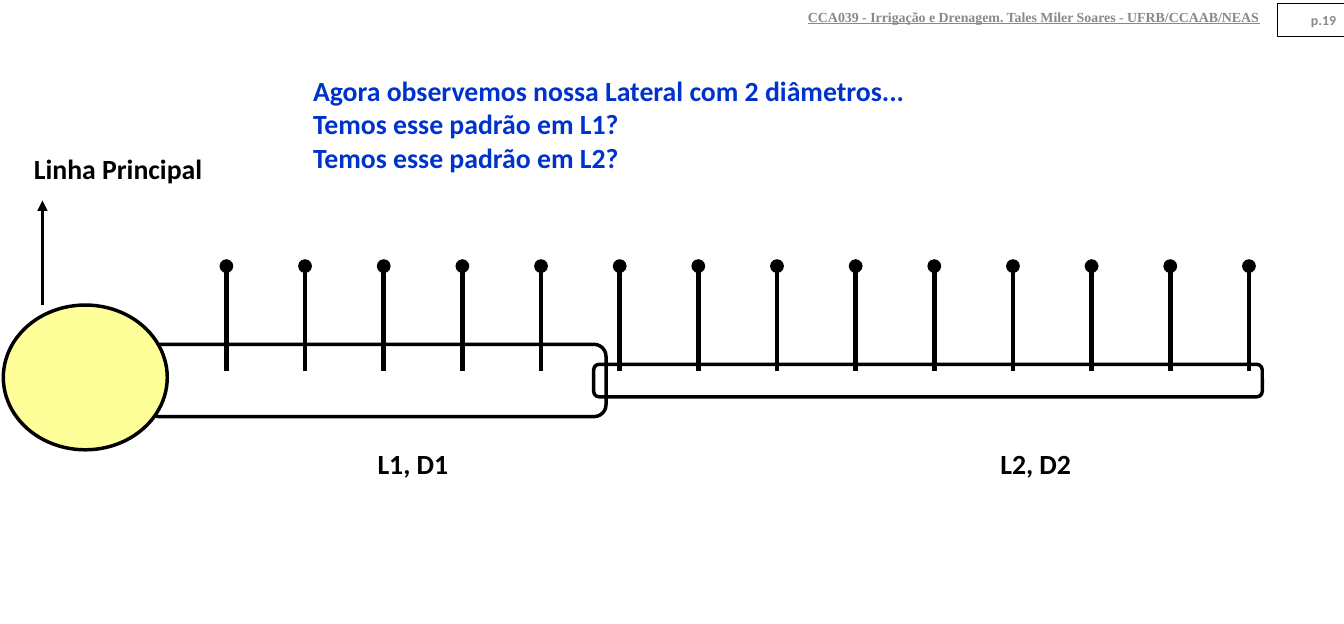
"""Build the slide about a two-diameter irrigation lateral with its emitters."""
import dataclasses

import pptx
import pptx.dml.color
import pptx.enum.shapes
import pptx.enum.text
import pptx.oxml
import pptx.oxml.ns
import pptx.slide
import pptx.text.text
import pptx.util

Pt = pptx.util.Pt
Align = pptx.enum.text.PP_ALIGN
Anchor = pptx.enum.text.MSO_ANCHOR
Preset = pptx.enum.shapes.MSO_SHAPE


@dataclasses.dataclass(frozen=True)
class Theme:
    ink: str = "000000"
    blue: str = "0033CC"
    grey: str = "898989"
    yellow: str = "FFFF99"
    body_font: str = "Calibri"
    header_font: str = "Times New Roman"
    body_size: float = 24
    header_size: float = 12
    thin: float = 0.75
    outline: float = 3
    emitter: float = 4


THEME = Theme()


@dataclasses.dataclass(frozen=True)
class Frame:
    left: float
    top: float
    width: float
    height: float


@dataclasses.dataclass(frozen=True)
class TextStyle:
    align: Align
    size: float = THEME.body_size
    color: str = THEME.ink
    font: str = THEME.body_font
    underline: bool = False
    anchor: Anchor = Anchor.TOP


@dataclasses.dataclass(frozen=True)
class Label:
    frame: Frame
    text: str
    style: TextStyle


@dataclasses.dataclass(frozen=True)
class Outline:
    preset: Preset
    frame: Frame
    width: float = THEME.outline
    fill: str | None = None
    text: str = ""


@dataclasses.dataclass(frozen=True)
class Riser:
    x: float
    bottom: float
    top: float
    width: float
    end: str


LABEL = TextStyle(Align.CENTER)
HEADING = TextStyle(Align.JUSTIFY, color=THEME.blue)
HEADER = TextStyle(Align.RIGHT, THEME.header_size, THEME.grey, THEME.header_font, True, Anchor.MIDDLE)
PAGE_NUMBER = TextStyle(Align.RIGHT, THEME.header_size, THEME.grey, anchor=Anchor.MIDDLE)

HEADING_FRAME = Frame(263.5, 60.4, 862, 94.3)
HEADING_LINES = (
    "Agora observemos nossa Lateral com 2 diâmetros...",
    "Temos esse padrão em L1?",
    "Temos esse padrão em L2?",
)
LABELS = (
    Label(Frame(8.6, 128, 187.2, 36.7), "Linha Principal", LABEL),
    Label(Frame(184.3, 382.9, 345.6, 36.7), "L1, D1", LABEL),
    Label(Frame(722.9, 382.9, 345.6, 36.7), "L2, D2", LABEL),
    Label(Frame(508.3, 0, 588.2, 28.8),
          "CCA039 - Irrigação e Drenagem. Tales Miler Soares - UFRB/CCAAB/NEAS", HEADER),
)
PAGE_BOX = Outline(Preset.RECTANGLE, Frame(1104.3, 2.9, 58.3, 28.8), THEME.thin, text="p.19")
PIPES = (
    Outline(Preset.ROUNDED_RECTANGLE, Frame(127.4, 298, 396.7, 62.6)),
    Outline(Preset.ROUNDED_RECTANGLE, Frame(513.4, 315.3, 578.2, 28.1)),
)
MAIN_LINE = Outline(Preset.OVAL, Frame(2.9, 264, 141.8, 125.3), fill=THEME.yellow)
MAIN_ARROW = Riser(36.7, 264, 173.5, THEME.outline, "triangle")
EMITTER_COUNT = 14
EMITTER_START = 195.8
EMITTER_GAP = 68.02
EMITTERS = tuple(
    Riser(EMITTER_START + index * EMITTER_GAP, 321, 230.3, THEME.emitter, "oval")
    for index in range(EMITTER_COUNT)
)


def rgb(color: str) -> pptx.dml.color.RGBColor:
    return pptx.dml.color.RGBColor.from_string(color)


def lengths(frame: Frame) -> tuple[pptx.util.Length, ...]:
    return tuple(Pt(value) for value in dataclasses.astuple(frame))


def write(text_frame: pptx.text.text.TextFrame, lines: tuple[str, ...], style: TextStyle) -> None:
    text_frame.word_wrap = True
    text_frame.auto_size = pptx.enum.text.MSO_AUTO_SIZE.NONE
    text_frame.vertical_anchor = style.anchor
    for index, line in enumerate(lines):
        para = text_frame.add_paragraph() if index else text_frame.paragraphs[0]
        para.alignment = style.align
        span = para.add_run()
        span.text = line
        span.font.name = style.font
        span.font.size = Pt(style.size)
        span.font.bold = True
        span.font.underline = style.underline
        span.font.color.rgb = rgb(style.color)


def add_heading(page: pptx.slide.Slide) -> None:
    title = page.shapes.title
    title.left, title.top, title.width, title.height = lengths(HEADING_FRAME)
    write(title.text_frame, HEADING_LINES, HEADING)


def add_label(page: pptx.slide.Slide, label: Label) -> None:
    box = page.shapes.add_textbox(*lengths(label.frame))
    write(box.text_frame, (label.text,), label.style)


def add_outline(page: pptx.slide.Slide, outline: Outline) -> None:
    shape = page.shapes.add_shape(outline.preset, *lengths(outline.frame))
    shape.shadow.inherit = False
    shape.line.color.rgb = rgb(THEME.ink)
    shape.line.width = Pt(outline.width)
    if outline.fill:
        shape.fill.solid()
        shape.fill.fore_color.rgb = rgb(outline.fill)
    else:
        shape.fill.background()
    if outline.text:
        write(shape.text_frame, (outline.text,), PAGE_NUMBER)


def add_riser(page: pptx.slide.Slide, riser: Riser) -> None:
    line = page.shapes.add_connector(
        pptx.enum.shapes.MSO_CONNECTOR.STRAIGHT,
        Pt(riser.x), Pt(riser.bottom), Pt(riser.x), Pt(riser.top),
    )
    line.line.color.rgb = rgb(THEME.ink)
    line.line.width = Pt(riser.width)
    namespace = pptx.oxml.ns.nsdecls("a")
    properties = line.element.spPr
    properties.find(pptx.oxml.ns.qn("a:ln")).append(
        pptx.oxml.parse_xml(f'<a:tailEnd {namespace} type="{riser.end}"/>'))
    properties.append(pptx.oxml.parse_xml(f"<a:effectLst {namespace}/>"))


def main() -> None:
    deck = pptx.Presentation()
    deck.slide_width, deck.slide_height = Pt(1162.25), Pt(540)
    page = deck.slides.add_slide(deck.slide_layouts.get_by_name("Title Only"))
    add_heading(page)
    for outline in (PAGE_BOX, *PIPES):
        add_outline(page, outline)
    for riser in (MAIN_ARROW, *EMITTERS):
        add_riser(page, riser)
    add_outline(page, MAIN_LINE)
    for label in LABELS:
        add_label(page, label)
    deck.save("out.pptx")


if __name__ == "__main__":
    main()
